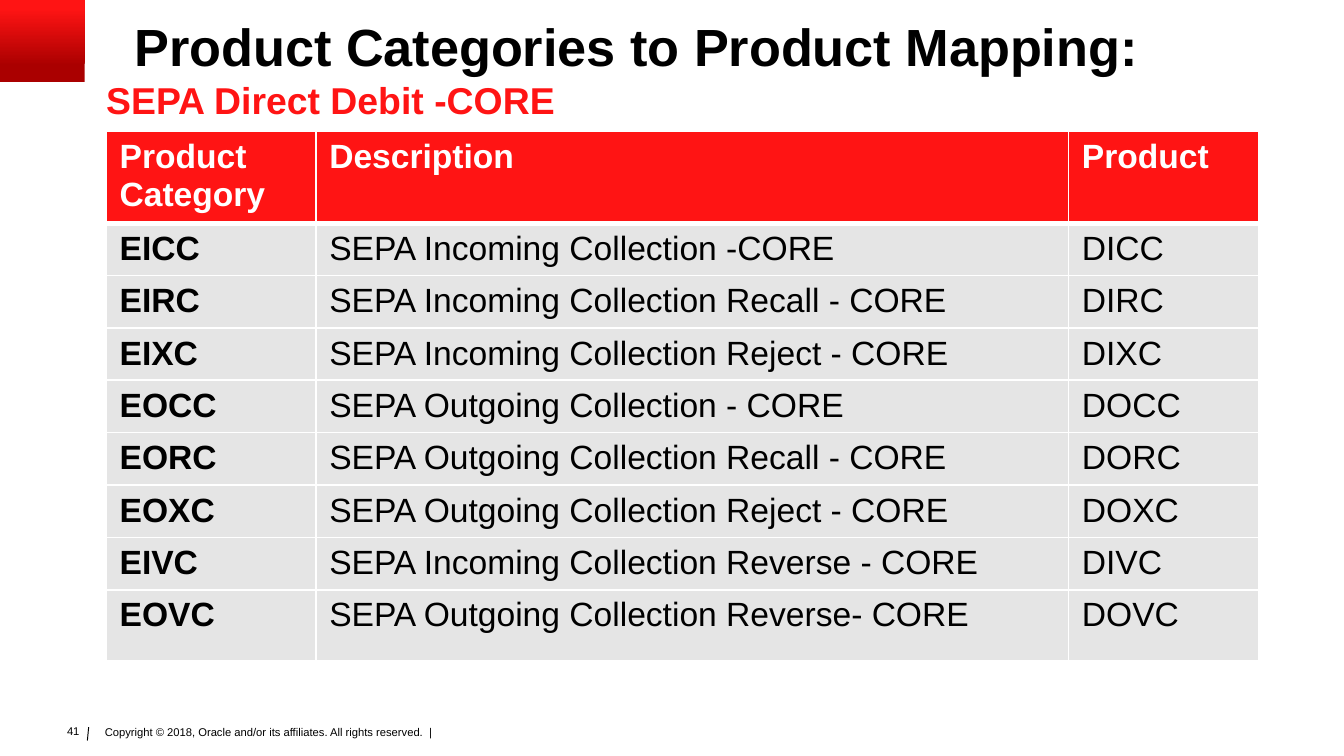
from typing import NamedTuple

from lxml import etree
from pptx import Presentation
from pptx.dml.color import RGBColor
from pptx.enum.shapes import MSO_CONNECTOR, MSO_SHAPE
from pptx.enum.text import MSO_ANCHOR as ANCHOR, MSO_AUTO_SIZE as AUTO_SIZE, PP_ALIGN as ALIGN
from pptx.oxml.ns import qn
from pptx.util import Inches, Pt

BLACK = RGBColor(0x00, 0x00, 0x00)
WHITE = RGBColor(0xFF, 0xFF, 0xFF)
RED = RGBColor(0xFF, 0x14, 0x14)
DARK_RED = RGBColor(0xAA, 0x00, 0x00)
GRAY = RGBColor(0xE5, 0xE5, 0xE5)
FONT = "Arial"


class Mapping(NamedTuple):
    category: str
    description: str
    product: str


HEADER = Mapping("Product Category", "Description", "Product")
MAPPINGS = [
    Mapping("EICC", "SEPA Incoming Collection -CORE", "DICC"),
    Mapping("EIRC", "SEPA Incoming Collection Recall - CORE", "DIRC"),
    Mapping("EIXC", "SEPA Incoming Collection Reject - CORE", "DIXC"),
    Mapping("EOCC", "SEPA Outgoing Collection - CORE", "DOCC"),
    Mapping("EORC", "SEPA Outgoing Collection Recall - CORE", "DORC"),
    Mapping("EOXC", "SEPA Outgoing Collection Reject - CORE", "DOXC"),
    Mapping("EIVC", "SEPA Incoming Collection Reverse - CORE", "DIVC"),
    Mapping("EOVC", "SEPA Outgoing Collection Reverse- CORE", "DOVC"),
]
COLUMN_WIDTHS = [1.56, 5.6, 1.42]
ROW_HEIGHTS = [0.68] + [0.39] * 7 + [0.53]


def write(tf, text: str, *, size: float, color: RGBColor = BLACK, bold: bool = False,
          align=ALIGN.LEFT, spacing: float = 1.0) -> None:
    p = tf.paragraphs[0]
    p.alignment = align
    p.line_spacing = spacing
    r = p.add_run()
    r.text = text
    r.font.name = FONT
    r.font.size = Pt(size)
    r.font.bold = bold
    r.font.color.rgb = color


def set_frame(tf, *, x_inset: float = 0, y_inset: float = 0, anchor=ANCHOR.TOP,
              wrap: bool = True) -> None:
    tf.margin_left = tf.margin_right = Inches(x_inset)
    tf.margin_top = tf.margin_bottom = Inches(y_inset)
    tf.vertical_anchor = anchor
    tf.word_wrap = wrap
    tf.auto_size = AUTO_SIZE.NONE


def place(sp, left: float, top: float, width: float, height: float) -> None:
    sp.left, sp.top = Inches(left), Inches(top)
    sp.width, sp.height = Inches(width), Inches(height)


def add_text(slide, left: float, top: float, width: float, height: float):
    return slide.shapes.add_textbox(
        Inches(left), Inches(top), Inches(width), Inches(height)).text_frame


def set_borders(cell, bottom: float) -> None:
    tc_pr = cell._tc.get_or_add_tcPr()
    widths = {"a:lnL": 1, "a:lnR": 1, "a:lnT": 1, "a:lnB": bottom}
    for i, (tag, width) in enumerate(widths.items()):
        ln = etree.Element(qn(tag), w=str(Pt(width)))
        fill = etree.SubElement(ln, qn("a:solidFill"))
        etree.SubElement(fill, qn("a:srgbClr"), val=str(WHITE))
        tc_pr.insert(i, ln)


def add_mapping_table(slide, left: float, top: float) -> None:
    rows = [HEADER, *MAPPINGS]
    table = slide.shapes.add_table(
        len(rows), len(COLUMN_WIDTHS), Inches(left), Inches(top),
        Inches(sum(COLUMN_WIDTHS)), Inches(sum(ROW_HEIGHTS))).table
    for column, width in zip(table.columns, COLUMN_WIDTHS):
        column.width = Inches(width)
    for i, (mapping, height) in enumerate(zip(rows, ROW_HEIGHTS)):
        table.rows[i].height = Inches(height)
        is_header = i == 0
        for j, text in enumerate(mapping):
            cell = table.cell(i, j)
            cell.fill.solid()
            cell.fill.fore_color.rgb = RED if is_header else GRAY
            set_borders(cell, bottom=3 if is_header else 1)
            write(cell.text_frame, text, size=18, bold=is_header or j == 0,
                  color=WHITE if is_header else BLACK)


def main() -> None:
    # Widescreen 16:9 slide
    prs = Presentation()
    prs.slide_width = Inches(10)
    prs.slide_height = prs.slide_width * 9 // 16
    slide = prs.slides.add_slide(prs.slide_layouts[5])

    # Footer: copyright, divider and page number
    tf = add_text(slide, 0.74, 5.38, 6.53, 0.24)
    set_frame(tf, x_inset=0.04, y_inset=0.02)
    write(tf, "Copyright © 2018, Oracle and/or its affiliates. All rights reserved.  |", size=6)

    divider = slide.shapes.add_connector(
        MSO_CONNECTOR.STRAIGHT, Inches(0.66), Inches(5.41), Inches(0.65), Inches(5.51))
    divider.line.color.rgb = BLACK
    divider.line.width = Pt(0.5)
    etree.SubElement(divider._element.spPr, qn("a:effectLst"))

    tf = add_text(slide, 0.39, 5.34, 0.3, 0.2)
    set_frame(tf, x_inset=0.1, y_inset=0.05, wrap=False)
    write(tf, "41", size=6, align=ALIGN.RIGHT)

    # Corner block
    corner = slide.shapes.add_shape(
        MSO_SHAPE.RECTANGLE, 0, 0, Inches(0.63), Inches(0.61))
    corner.shadow.inherit = False
    corner.line.fill.background()
    corner.fill.gradient()
    corner.fill.gradient_angle = 90
    stops = [(0.2, DARK_RED), (0.9, RED)]
    for stop, (position, color) in zip(corner.fill.gradient_stops, stops):
        stop.position = position
        stop.color.rgb = color

    # Title and subtitle
    title = slide.shapes.title
    place(title, 1, 0.16, 9, 0.48)
    set_frame(title.text_frame)
    write(title.text_frame, "Product Categories to Product Mapping:",
          size=28, bold=True, spacing=0.9)

    tf = add_text(slide, 0.79, 0.58, 9, 0.33)
    set_frame(tf, anchor=ANCHOR.BOTTOM)
    write(tf, "SEPA Direct Debit -CORE", size=20, color=RED, bold=True)

    # Category to product table
    add_mapping_table(slide, 0.79, 0.98)

    prs.save("out.pptx")


if __name__ == "__main__":
    main()
